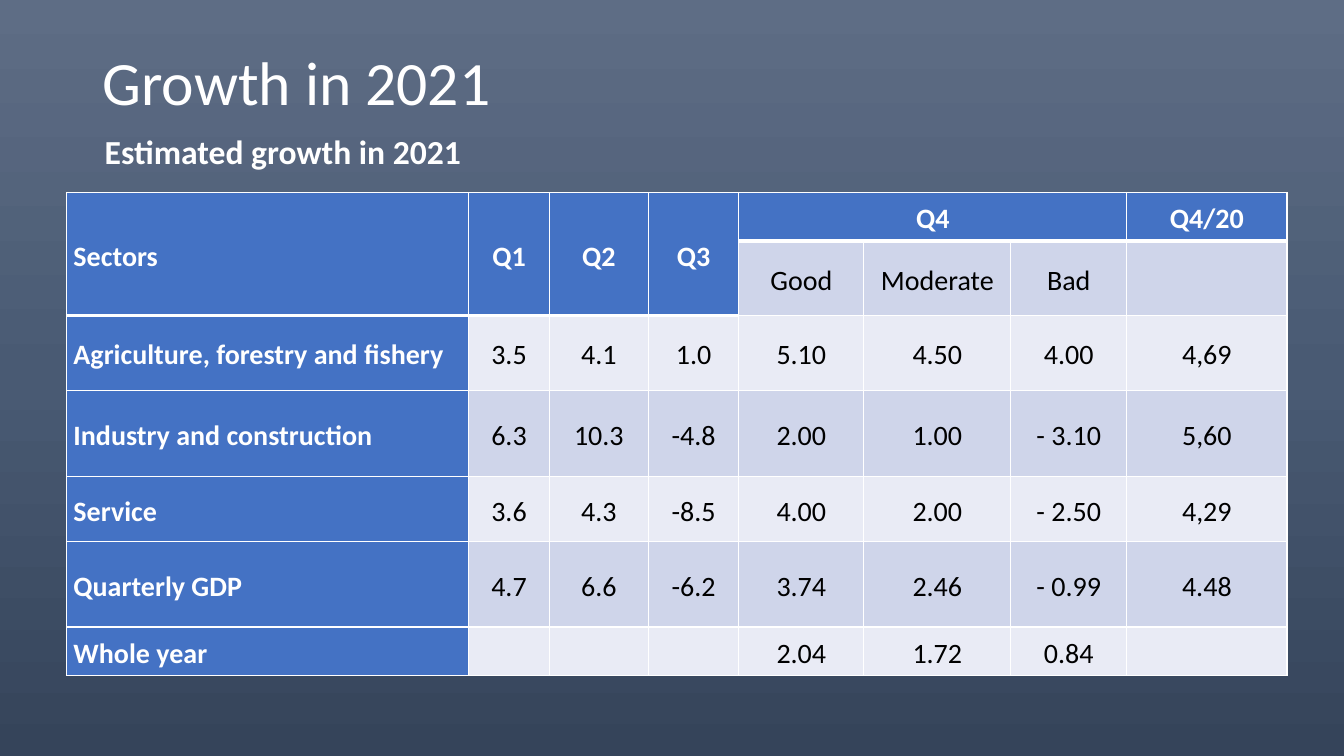
from lxml.etree import SubElement, Element
from pptx import Presentation
from pptx.dml.color import RGBColor
from pptx.enum.text import MSO_ANCHOR, PP_ALIGN
from pptx.oxml.ns import qn
from pptx.util import Pt

hues = {
    "top": "5E6D85", "mid": "495A73", "base": "35445A",
    "head": "4472C4", "dark": "CFD5EA", "light": "E9EBF5",
    "white": "FFFFFF", "black": "000000",
}


def write(frame, text, size, hue, bold):
    run = frame.paragraphs[0].add_run()
    run.text = text
    run.font.name = "Calibri"
    run.font.size = Pt(size)
    run.font.bold = bold
    run.font.color.rgb = RGBColor.from_string(hues[hue])
    return frame.paragraphs[0]


def edge(cell, widths):
    props = cell._tc.get_or_add_tcPr()
    for spot, (side, width) in enumerate(zip("LRTB", widths)):
        line = Element(qn(f"a:ln{side}"), w=str(Pt(width)))
        fill = SubElement(line, qn("a:solidFill"))
        SubElement(fill, qn("a:srgbClr"), val=hues["white"])
        props.insert(spot, line)


deck = Presentation()
deck.slide_width, deck.slide_height = Pt(960), Pt(540)
slide = deck.slides.add_slide(deck.slide_layouts[6])

back = slide.background.fill
back.gradient()
back.gradient_angle = 270
stops = next(slide.element.iter(qn("a:gsLst")))
for stop in list(stops):
    stops.remove(stop)
for place, hue in ((0, "top"), (50, "mid"), (100, "base")):
    stop = SubElement(stops, qn("a:gs"), pos=str(place * 1000))
    SubElement(stop, qn("a:srgbClr"), val=hues[hue])

titles = [
    ("Growth in 2021", (66.24, 28.8, 828, 64.8), 44, False, MSO_ANCHOR.MIDDLE, 0.9, 0),
    ("Estimated growth in 2021", (67.68, 93.6, 406, 32.4), 24, True, MSO_ANCHOR.BOTTOM, 0.8, 10),
]
for text, place, size, bold, anchor, space, gap in titles:
    frame = slide.shapes.add_textbox(*map(Pt, place)).text_frame
    frame.word_wrap = True
    frame.vertical_anchor = anchor
    para = write(frame, text, size, "white", bold)
    para.line_spacing = space
    para.space_before = Pt(gap)

rows = [
    ["Sectors", "Q1", "Q2", "Q3", "Q4", "", "", "Q4/20"],
    ["", "", "", "", "Good", "Moderate", "Bad", ""],
    ["Agriculture, forestry and fishery", "3.5", "4.1", "1.0", "5.10", "4.50", "4.00", "4,69"],
    ["Industry and construction", "6.3", "10.3", "-4.8", "2.00", "1.00", "- 3.10", "5,60"],
    ["Service", "3.6", "4.3", "-8.5", "4.00", "2.00", "- 2.50", "4,29"],
    ["Quarterly GDP", "4.7", "6.6", "-6.2", "3.74", "2.46", "- 0.99", "4.48"],
    ["Whole year", "", "", "", "2.04", "1.72", "0.84", ""],
]
wides = [287.3, 57.6, 70.8, 64.6, 89.3, 105, 82.8, 114.5]
highs = [34.6, 53.3, 53.3, 61.9, 46.3, 61, 34.6]
table = slide.shapes.add_table(
    len(rows), len(wides), Pt(47.5), Pt(137.5), Pt(sum(wides)), Pt(sum(highs))
).table
for col, wide in zip(table.columns, wides):
    col.width = Pt(wide)
for row, high in zip(table.rows, highs):
    row.height = Pt(high)

for r, row in enumerate(rows):
    for c, text in enumerate(row):
        cell = table.cell(r, c)
        depth = 2 if c < 4 else 1
        head = r < depth
        strong = head or c == 0
        band = "head" if strong else "dark" if r % 2 else "light"
        cell.fill.solid()
        cell.fill.fore_color.rgb = RGBColor.from_string(hues[band])
        cell.vertical_anchor = MSO_ANCHOR.MIDDLE
        cell.margin_left = cell.margin_right = Pt(5)
        cell.margin_top = cell.margin_bottom = 0
        edge(cell, (1, 1, 3 if r == depth else 1, 3 if head else 1))
        if text:
            para = write(cell.text_frame, text, 20, "white" if strong else "black", strong)
            para.alignment = PP_ALIGN.CENTER if c else PP_ALIGN.LEFT
            para.line_spacing = 1.15
            para.space_before = para.space_after = Pt(3)

for c in range(4):
    table.cell(0, c).merge(table.cell(1, c))
table.cell(0, 4).merge(table.cell(0, 6))

deck.save("out.pptx")
